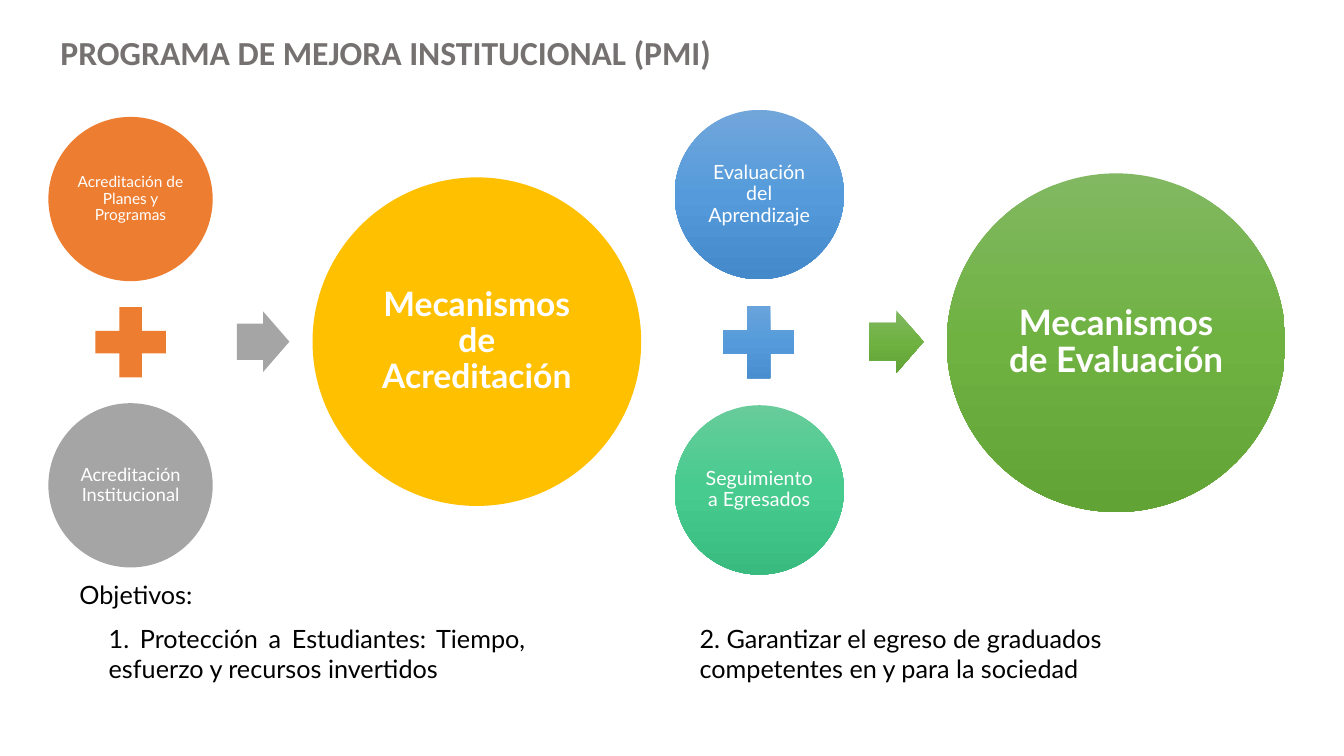
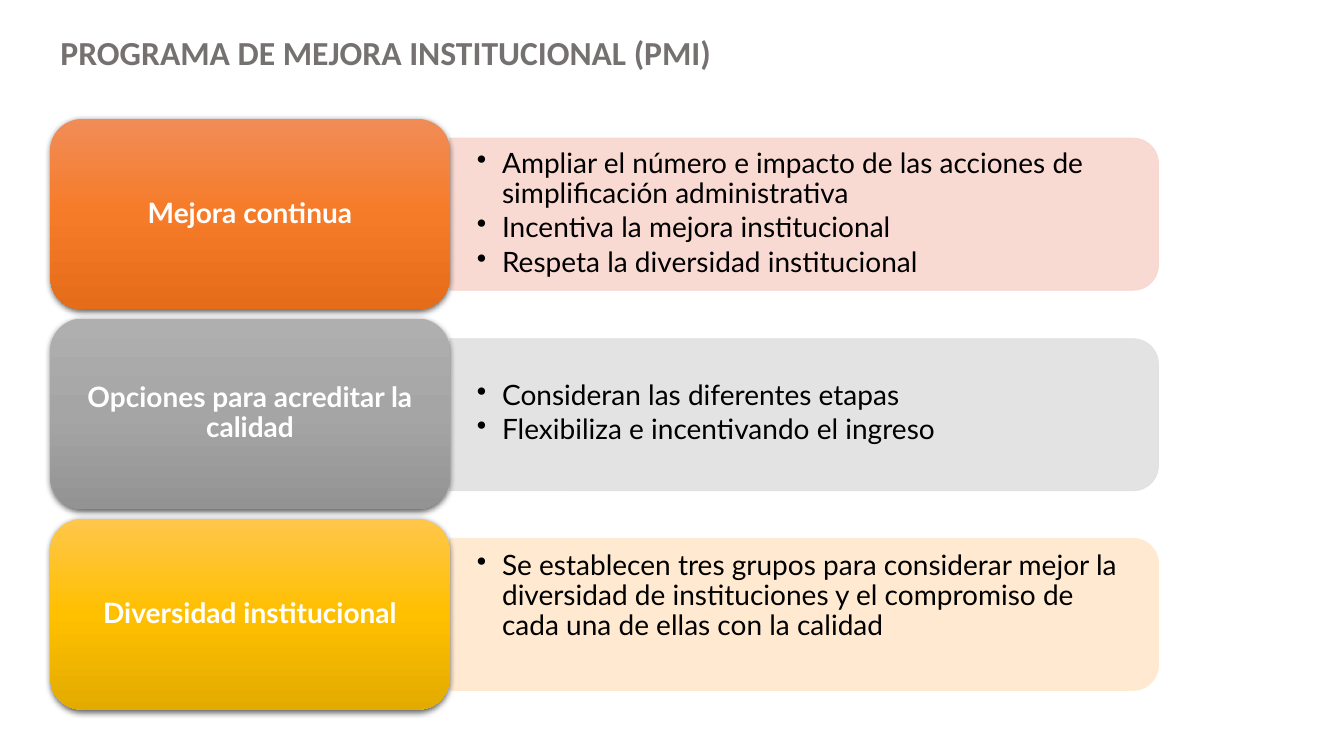
from copy import deepcopy

from lxml import etree
from pptx import Presentation
from pptx import util as u
from pptx.dml.color import RGBColor
from pptx.enum import shapes, text
from pptx.oxml import ns

PX = 9144
TITLE = "PROGRAMA DE MEJORA INSTITUCIONAL (PMI)"
COLORS = {
    "title": "767171", "ink": "000000", "white": "FFFFFF",
    "orange": "ED7D31", "gray": "A5A5A5", "gold": "FFC000",
    "pale orange": "F8D7CE", "pale gray": "E1E1E1", "pale gold": "FFE8CC",
}
GRADIENTS = {
    "blue": ("71A6DB", "559BDB", "448ACA"),
    "teal": ("67CC9A", "47CB8E", "39BB7F"),
    "green": ("81B861", "6FB242", "62A336"),
    "orange card": ("F18C57", "F67B28", "E56C19"),
    "gray card": ("AFAFAF", "A5A5A5", "939393"),
    "gold card": ("FFC64B", "FFC000", "E3AB00"),
}
SHAPE = shapes.MSO_SHAPE
ALIGN = text.PP_ALIGN
ANCHOR = text.MSO_ANCHOR


def px(*lengths):
    return [u.Emu(round(length) * PX) for length in lengths]


def rgb(name):
    return RGBColor.from_string(COLORS[name])


def write(shape, lines, size=18, color="ink", bold=False, font="Lato", align=ALIGN.LEFT,
          anchor=ANCHOR.TOP, insets=(10, 5, 10, 5), spacing=1.0, after=0, bullet=None):
    frame = shape.text_frame
    frame.word_wrap = True
    frame.auto_size = text.MSO_AUTO_SIZE.NONE
    frame.vertical_anchor = anchor
    (frame.margin_left, frame.margin_top,
     frame.margin_right, frame.margin_bottom) = px(*insets)
    for index, line in enumerate(lines):
        paragraph = frame.add_paragraph() if index else frame.paragraphs[0]
        if bullet:
            properties = paragraph._p.get_or_add_pPr()
            properties.set("marL", str(25 * PX))
            properties.set("indent", str(-25 * PX))
            etree.SubElement(properties, ns.qn("a:buChar"), char=bullet)
        paragraph.alignment = align
        paragraph.line_spacing = spacing
        paragraph.space_after = u.Pt(after)
        run = paragraph.add_run()
        run.text = line
        run.font.name, run.font.size, run.font.bold = font, u.Pt(size), bold
        run.font.color.rgb = rgb(color)


class Deck:
    """Holds the shared style, the presentation and its current slide."""

    def __init__(self):
        self.presentation = Presentation()
        self.presentation.slide_width, self.presentation.slide_height = px(1333, 750)
        self.slide = None

    def new_slide(self):
        self.slide = self.presentation.slides.add_slide(self.presentation.slide_layouts[5])
        title = self.slide.shapes.title
        title.left, title.top, title.width, title.height = px(50, 27, 965, 50)
        write(title, [TITLE], size=24, color="title", bold=True, font="Calibri")

    def shape(self, kind, left, top, width, height, fill):
        shape = self.slide.shapes.add_shape(kind, *px(left, top, width, height))
        shape.shadow.inherit = False
        shape.line.fill.background()
        if fill in GRADIENTS:
            shape.fill.gradient()
            shape.fill.gradient_angle = 270
            stop_list = shape._element.spPr.find(".//" + ns.qn("a:gsLst"))
            stop_list.append(deepcopy(stop_list[0]))
            stops = zip(shape.fill.gradient_stops, GRADIENTS[fill], (0, 0.5, 1))
            for stop, color, position in stops:
                stop.color.rgb = RGBColor.from_string(color)
                stop.position = position
        else:
            shape.fill.solid()
            shape.fill.fore_color.rgb = rgb(fill)
        return shape

    def text_box(self, left, top, width, height, lines, **style):
        write(self.slide.shapes.add_textbox(*px(left, top, width, height)), lines, **style)

    def circle(self, left, middle, diameter, label, fill, size, bold=False):
        circle = self.shape(SHAPE.OVAL, left, middle - diameter / 2, diameter, diameter, fill)
        write(circle, [label], size=size, color="white", bold=bold, align=ALIGN.CENTER,
              anchor=ANCHOR.MIDDLE, insets=(2, 2, 2, 2), spacing=0.9)

    def equation(self, left, diameter, parts, plus_fill, arrow_fill, result):
        middle = 339.5
        plus = 0.58 * diameter
        offset = diameter / 2 + 0.08 * diameter + plus / 2
        for side, part in zip((-1, 1), parts):
            self.circle(left, middle + side * offset, diameter, *part)
        self.shape(SHAPE.MATH_PLUS, left + (diameter - plus) / 2, middle - plus / 2,
                   plus, plus, plus_fill)
        arrow_height = 0.37 * diameter
        arrow = self.shape(SHAPE.RIGHT_ARROW, left + 1.15 * diameter, middle - arrow_height / 2,
                           0.32 * diameter, arrow_height, arrow_fill)
        arrow.adjustments[0], arrow.adjustments[1] = 0.6, 0.5
        self.circle(left + 1.61 * diameter, middle, 2 * diameter, *result, bold=True)

    def panel(self, top, fill, bullets, spare):
        width, height, left = 703, 151, 446
        shift = (width - height) / 2
        panel = self.shape(SHAPE.ROUND_2_SAME_RECTANGLE, left + shift, top - shift,
                           height, width, fill)
        panel.rotation = 90
        panel.line.color.rgb = rgb(fill)
        panel.line.width = u.Pt(0.5)
        for color in panel._element.spPr.iter(ns.qn("a:srgbClr")):
            etree.SubElement(color, ns.qn("a:alpha"), val="90000")
        self.text_box(left, top + 7, 696, 136, bullets, size=20, anchor=ANCHOR.MIDDLE,
                      insets=(27, 0, 27, spare), spacing=0.9, after=3, bullet="•")

    def card(self, top, fill, label):
        card = self.shape(SHAPE.ROUNDED_RECTANGLE, 50, top, 396, 189, fill)
        effects = card._element.spPr.find(ns.qn("a:effectLst"))
        shadow = etree.SubElement(effects, ns.qn("a:outerShdw"), blurRad="57150",
                                  dist="19050", dir="5400000", algn="ctr", rotWithShape="0")
        color = etree.SubElement(shadow, ns.qn("a:srgbClr"), val=COLORS["ink"])
        etree.SubElement(color, ns.qn("a:alpha"), val="63000")
        write(card, [label], size=20, color="white", bold=True, align=ALIGN.CENTER,
              anchor=ANCHOR.MIDDLE, insets=(8, 4, 8, 4), spacing=0.9)


def mechanisms_slide(deck):
    deck.new_slide()
    deck.equation(48, 163, [("Acreditación de Planes y Programas", "orange", 11),
                            ("Acreditación Institucional", "gray", 13)],
                  "orange", "gray", ("Mecanismos de Acreditación", "gold", 24))
    deck.equation(669, 168, [("Evaluación del Aprendizaje", "blue", 14),
                             ("Seguimiento a Egresados", "teal", 14)],
                  "blue", "green", ("Mecanismos de Evaluación", "green", 25))
    deck.text_box(69, 570, 204, 40, ["Objetivos:"])
    deck.text_box(98, 613, 433, 101, [
        "1. Protección a Estudiantes: Tiempo, esfuerzo y recursos invertidos"],
        align=ALIGN.JUSTIFY)
    deck.text_box(684, 613, 488, 101, [
        "2. Garantizar el egreso de graduados competentes en y para la sociedad"])


def goals_slide(deck):
    deck.new_slide()
    rows = [
        ("Mejora continua", "orange", 0, [
            "Ampliar el número e impacto de las acciones de simplificación administrativa",
            "Incentiva la mejora institucional",
            "Respeta la diversidad institucional"]),
        ("Opciones para acreditar la calidad", "gray", 0, [
            "Consideran las diferentes etapas",
            "Flexibiliza e incentivando el ingreso"]),
        ("Diversidad institucional", "gold", 34, [
            "Se establecen tres grupos para considerar mejor la diversidad de instituciones "
            "y el compromiso de cada una de ellas con la calidad"]),
    ]
    for index, (label, color, spare, bullets) in enumerate(rows):
        top = 118 + 198.5 * index
        deck.panel(top + 19, "pale " + color, bullets, spare)
        deck.card(top, color + " card", label)


def main():
    deck = Deck()
    mechanisms_slide(deck)
    goals_slide(deck)
    deck.presentation.save("out.pptx")


if __name__ == "__main__":
    main()
